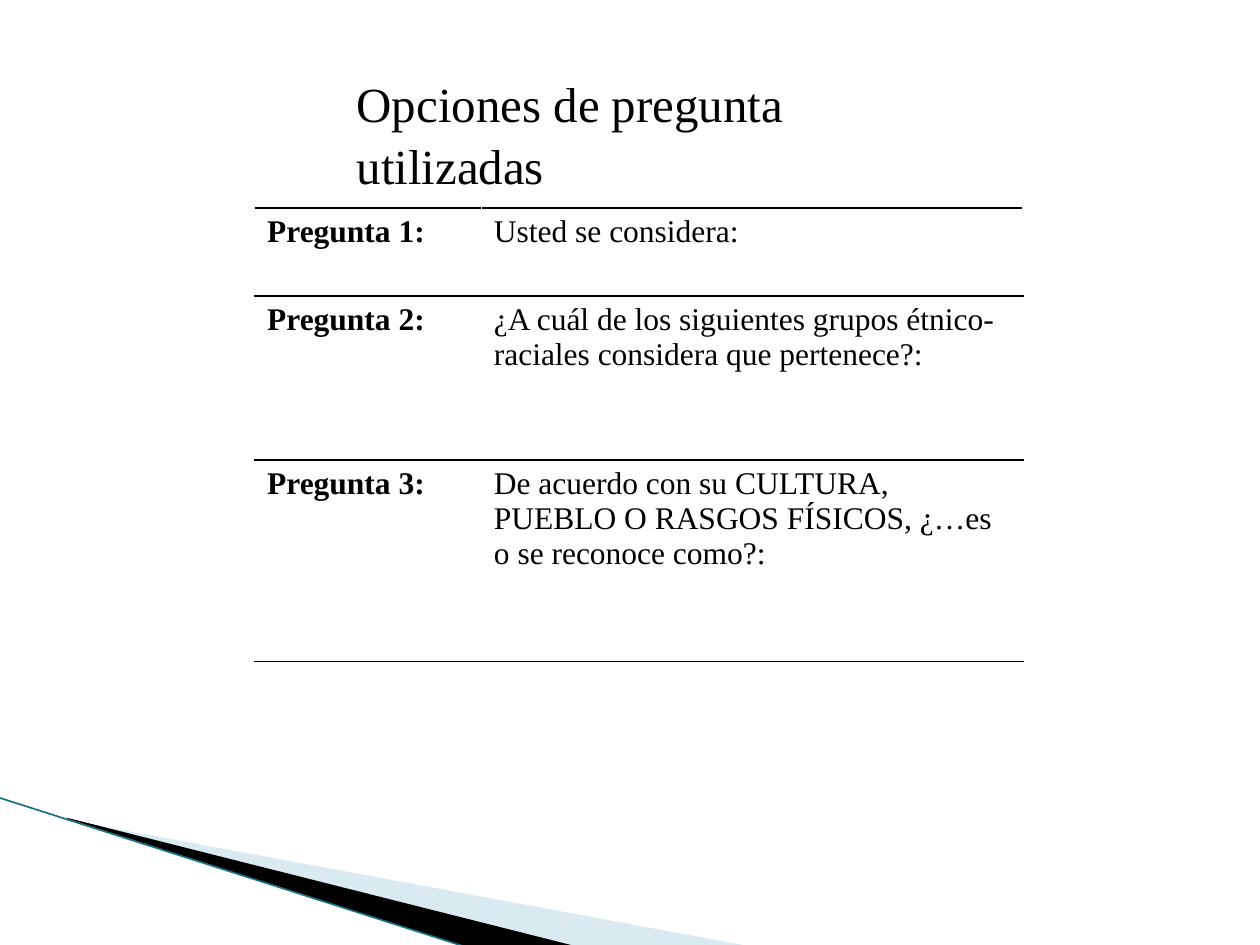
from dataclasses import dataclass
from typing import Optional

import lxml.etree
import pptx
import pptx.dml.color
import pptx.enum.shapes
import pptx.enum.text
import pptx.oxml.ns
import pptx.util

Inches = pptx.util.Inches
Pt = pptx.util.Pt
RGBColor = pptx.dml.color.RGBColor


@dataclass(frozen=True)
class Theme:
    font: str = "Times New Roman"
    title_size: int = 28
    table_size: int = 18
    ink: str = "000000"
    paper: str = "FFFFFF"
    pale_blue: str = "A0CBDC"
    teal: str = "1A6F82"


@dataclass(frozen=True)
class Wedge:
    points: tuple[tuple[float, float], ...]
    color: str
    opacity: Optional[int] = None


@dataclass(frozen=True)
class Question:
    label: str
    wording: str
    height: float


THEME = Theme()
WEDGES = (
    Wedge(((0.55, 6.51), (5.95, 7.51), (4.56, 7.51), (0.55, 6.5)), THEME.pale_blue, 40),
    Wedge(((0.53, 6.49), (4.57, 7.51), (3.72, 7.52), (0.54, 6.5)), THEME.ink),
)
QUESTIONS = (
    Question("Pregunta 1:", "Usted se considera:", 0.7),
    Question("Pregunta 2:", "¿A cuál de los siguientes grupos étnico-raciales considera que pertenece?:", 1.3),
    Question("Pregunta 3:", "De acuerdo con su CULTURA, PUEBLO O RASGOS FÍSICOS, ¿…es o se reconoce como?:", 1.6),
)
COLUMN_WIDTHS = (1.8, 4.3)
BORDERS = {"lnL": THEME.paper, "lnR": THEME.paper, "lnT": THEME.ink, "lnB": THEME.ink}


def add_element(parent, tag: str, **attributes: str):
    return lxml.etree.SubElement(parent, pptx.oxml.ns.qn(tag), attributes)


def format_paragraph(paragraph, size: int, bold: bool = False) -> None:
    values = {"name": THEME.font, "size": Pt(size), "bold": bold}
    for name, value in values.items():
        setattr(paragraph.font, name, value)
    paragraph.font.color.rgb = RGBColor.from_string(THEME.ink)


def draw_wedge(slide, wedge: Wedge) -> None:
    start, *others = [(Inches(x), Inches(y)) for x, y in wedge.points]
    builder = slide.shapes.build_freeform(*start)
    builder.add_line_segments(others)
    shape = builder.convert_to_shape()
    shape.shadow.inherit = False
    shape.line.fill.background()
    shape.fill.solid()
    shape.fill.fore_color.rgb = RGBColor.from_string(wedge.color)
    if wedge.opacity is not None:
        color = shape.fill._xPr.find(".//" + pptx.oxml.ns.qn("a:srgbClr"))
        add_element(color, "a:alpha", val=str(wedge.opacity * 1000))


def draw_edge_line(slide) -> None:
    connector = slide.shapes.add_connector(
        pptx.enum.shapes.MSO_CONNECTOR.STRAIGHT,
        Inches(-0.01), Inches(6.33), Inches(3.71), Inches(7.52),
    )
    connector.line.color.rgb = RGBColor.from_string(THEME.teal)
    connector.line.width = Pt(0.95)
    add_element(connector._element.spPr, "a:effectLst")


def draw_cell(cell, text: str, bold: bool) -> None:
    cell.text = text
    format_paragraph(cell.text_frame.paragraphs[0], THEME.table_size, bold)
    properties = cell._tc.get_or_add_tcPr()
    for side, color in BORDERS.items():
        border = add_element(properties, f"a:{side}", w=str(Pt(1)))
        fill = add_element(border, "a:solidFill")
        add_element(fill, "a:srgbClr", val=color)
    cell.fill.background()


def draw_questions(slide) -> None:
    frame = slide.shapes.add_table(
        len(QUESTIONS), len(COLUMN_WIDTHS), Inches(2.02), Inches(1.65),
        Inches(sum(COLUMN_WIDTHS)), Inches(sum(question.height for question in QUESTIONS)),
    )
    table = frame.table
    table.first_row = table.horz_banding = False
    for column, width in zip(table.columns, COLUMN_WIDTHS):
        column.width = Inches(width)
    for index, question in enumerate(QUESTIONS):
        table.rows[index].height = Inches(question.height)
        draw_cell(table.cell(index, 0), question.label, bold=True)
        draw_cell(table.cell(index, 1), question.wording, bold=False)


def draw_title(slide, text: str) -> None:
    title = slide.shapes.title
    place = {"left": 2.73, "top": 0.51, "width": 5.06, "height": 0.57}
    for name, value in place.items():
        setattr(title, name, Inches(value))
    text_frame = title.text_frame
    frame_values = {
        "text": text,
        "word_wrap": True,
        "auto_size": pptx.enum.text.MSO_AUTO_SIZE.SHAPE_TO_FIT_TEXT,
        "vertical_anchor": pptx.enum.text.MSO_ANCHOR.TOP,
    }
    for name, value in frame_values.items():
        setattr(text_frame, name, value)
    paragraph = text_frame.paragraphs[0]
    paragraph.alignment = pptx.enum.text.PP_ALIGN.LEFT
    paragraph.line_spacing = 1.05
    format_paragraph(paragraph, THEME.title_size)


def main() -> None:
    presentation = pptx.Presentation()
    presentation.slide_width = Inches(10)
    presentation.slide_height = Inches(7.5)
    slide = presentation.slides.add_slide(presentation.slide_layouts.get_by_name("Title Only"))
    for wedge in WEDGES:
        draw_wedge(slide, wedge)
    draw_edge_line(slide)
    draw_questions(slide)
    draw_title(slide, "Opciones de pregunta utilizadas")
    presentation.save("out.pptx")


if __name__ == "__main__":
    main()
